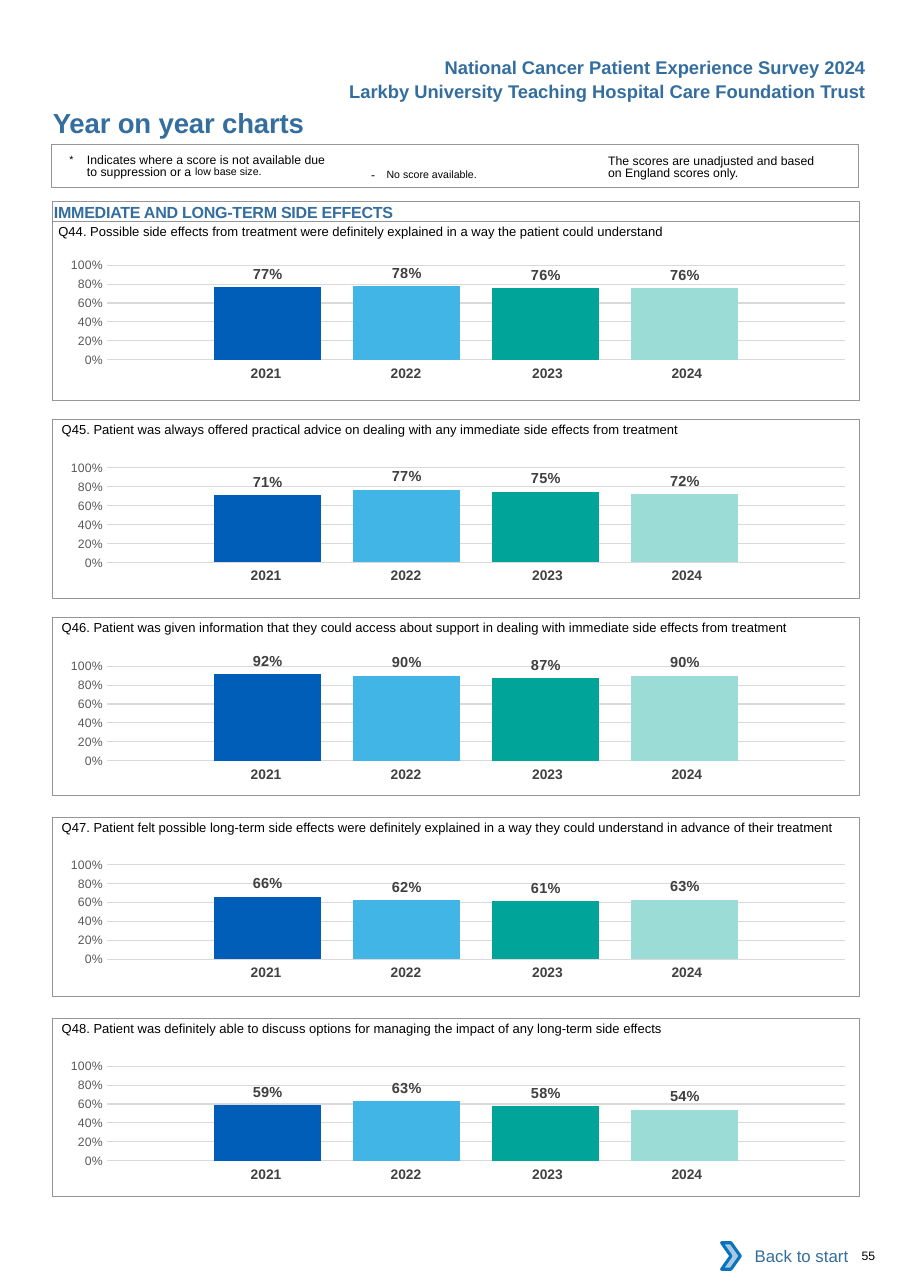
"""Build the year on year charts page of a patient experience survey report."""
from pptx import Presentation
from pptx.chart.data import CategoryChartData
from pptx.dml.color import RGBColor
from pptx.enum.chart import XL_CHART_TYPE as ChartType, XL_LABEL_POSITION as LabelPosition
from pptx.enum.chart import XL_TICK_MARK as TickMark
from pptx.enum.shapes import MSO_SHAPE as Shape
from pptx.enum.text import MSO_ANCHOR as Anchor, PP_ALIGN as Align
from pptx.oxml import parse_xml
from pptx.oxml.ns import nsdecls, qn
from pptx.util import Inches, Pt

BLACK = RGBColor(0x00, 0x00, 0x00)
WHITE = RGBColor(0xFF, 0xFF, 0xFF)
HEADING = RGBColor(0x33, 0x6E, 0x9F)
FRAME = RGBColor(0x93, 0x95, 0x98)
YEAR_TEXT = RGBColor(0x41, 0x40, 0x42)
VALUE_TEXT = RGBColor(0x40, 0x40, 0x40)
AXIS_TEXT = RGBColor(0x59, 0x59, 0x59)
GRID = RGBColor(0xD9, 0xD9, 0xD9)
CHEVRON_FILL = RGBColor(0xA8, 0xC7, 0xE9)
CHEVRON_LINE = RGBColor(0x0A, 0x74, 0xBB)
BARS = (RGBColor(0x00, 0x5E, 0xB8), RGBColor(0x41, 0xB6, 0xE6),
        RGBColor(0x00, 0xA4, 0x99), RGBColor(0x9C, 0xDC, 0xD7))

YEAR_COLUMNS = (("2021", 1.27, 0), ("2022", 1.27, 0), ("2023", 1.34, 0.04), ("2024", 1.27, 0.12))
PLOT_LAYOUT = {"layoutTarget": "inner", "xMode": "edge", "yMode": "edge",
               "x": 0.08, "y": 0.145, "w": 0.915, "h": 0.666}
NO_TABLE_STYLE = "{2D5ABB26-0587-4C30-8999-92F81FD0307C}"
PADDING = (0.1, 0.05, 0.1, 0.05)
NOTE = {"insets": (0, 0.03, 0, 0), "leading": Pt(8.1)}
TITLE = {"color": HEADING, "bold": True}
PANELS = (
    (2.01, 2.22, 0.53, "Q44. Possible side effects from treatment were definitely explained "
     "in a way the patient could understand", (0.77, 0.78, 0.76, 0.76)),
    (3.81, 4.06, 0.56, "Q45. Patient was always offered practical advice on dealing with "
     "any immediate side effects from treatment", (0.71, 0.77, 0.75, 0.72)),
    (5.6, 5.86, 0.56, "Q46. Patient was given information that they could access about "
     "support in dealing with immediate side effects from treatment", (0.92, 0.9, 0.87, 0.9)),
    (7.42, 7.66, 0.56, "Q47. Patient felt possible long-term side effects were definitely "
     "explained in a way they could understand in advance of their treatment",
     (0.66, 0.62, 0.61, 0.63)),
    (9.24, 9.49, 0.56, "Q48. Patient was definitely able to discuss options for managing "
     "the impact of any long-term side effects", (0.59, 0.63, 0.58, 0.54)),
)


def assign(target, **values):
    """Set each named format value on the target."""
    for name, value in values.items():
        setattr(target, name, value)


class SurveyPage:
    """Hold the page style and the current slide."""

    font_name = "Arial"

    def __init__(self, presentation):
        """Add a blank slide to the presentation."""
        self.slide = presentation.slides.add_slide(presentation.slide_layouts[6])

    def style(self, font, size, color, bold=False):
        """Apply the page font with a size, colour and weight."""
        assign(font, name=self.font_name, size=Pt(size), bold=bold)
        font.color.rgb = color

    def fill_frame(self, frame, runs, color=BLACK, bold=False, align=Align.LEFT,
                   insets=(0, 0, 0, 0), anchor=Anchor.TOP, leading=None):
        """Put runs of (text, size, baseline, spacing) in one paragraph."""
        left, top, right, bottom = map(Inches, insets)
        assign(frame, word_wrap=True, vertical_anchor=anchor, margin_left=left,
               margin_top=top, margin_right=right, margin_bottom=bottom)
        paragraph = frame.paragraphs[0]
        assign(paragraph, alignment=align, line_spacing=leading)
        for text, size, baseline, spacing in runs:
            run = paragraph.add_run()
            run.text = text
            self.style(run.font, size, color, bold)
            properties = run._r.get_or_add_rPr()
            properties.set("baseline", str(baseline * 1000))
            properties.set("spc", str(round(spacing * 100)))
        return paragraph

    def text(self, box, *runs, **options):
        """Add a text box."""
        shape = self.slide.shapes.add_textbox(*map(Inches, box))
        return self.fill_frame(shape.text_frame, runs, **options)

    def shape(self, box, kind=Shape.RECTANGLE, fill=None, line=None, width=0.5):
        """Add a preset shape without a shadow."""
        shape = self.slide.shapes.add_shape(kind, *map(Inches, box))
        shape.shadow.inherit = False
        shape.line.width = Pt(width)
        for paint, color in ((shape.fill, fill), (shape.line.fill, line)):
            if color is None:
                paint.background()
            else:
                paint.solid()
                paint.fore_color.rgb = color
        return shape

    def year_table(self, top):
        """Add the row of year labels under a chart."""
        box = map(Inches, (1.73, top, 5.15, 0.27))
        graphic = self.slide.shapes.add_table(1, len(YEAR_COLUMNS), *box)
        assign(graphic.table, first_row=False, horz_banding=False)
        next(graphic._element.iter(qn("a:tableStyleId"))).text = NO_TABLE_STYLE
        for index, (year, width, margin) in enumerate(YEAR_COLUMNS):
            graphic.table.columns[index].width = Inches(width)
            cell = graphic.table.cell(0, index)
            cell.fill.background()
            assign(cell, margin_left=Inches(0.1), margin_right=Inches(margin))
            paragraph = cell.text_frame.paragraphs[0]
            assign(paragraph, text=year, alignment=Align.CENTER)
            self.style(paragraph.runs[0].font, 9, YEAR_TEXT, True)

    def chart(self, top, scores):
        """Add a column chart with one series for each year."""
        data = CategoryChartData(number_format="0%")
        data.categories = ["1"]
        for number, score in enumerate(scores, 1):
            data.add_series(f"Series {number}", [score])
        box = map(Inches, (0.39, top, 7.32, 1.29))
        chart = self.slide.shapes.add_chart(ChartType.COLUMN_CLUSTERED, *box, data).chart
        assign(chart, has_legend=False, has_title=False)
        assign(chart.font, name="Calibri", size=Pt(10))
        chart.font.color.rgb = BLACK
        chart.category_axis.visible = False
        axis = chart.value_axis
        assign(axis, minimum_scale=0, maximum_scale=1, major_unit=0.2,
               major_tick_mark=TickMark.NONE, minor_tick_mark=TickMark.NONE)
        axis.format.line.fill.background()
        assign(axis.tick_labels, number_format="0%", number_format_is_linked=False)
        self.style(axis.tick_labels.font, 8, AXIS_TEXT)
        grid = axis.major_gridlines.format.line
        grid.width = Pt(0.75)
        grid.color.rgb = GRID
        plot = chart.plots[0]
        assign(plot, gap_width=200, overlap=-30, vary_by_categories=False)
        for series, color in zip(plot.series, BARS):
            series.format.fill.solid()
            series.format.fill.fore_color.rgb = color
            labels = series.data_labels
            assign(labels, show_value=True, position=LabelPosition.OUTSIDE_END,
                   number_format="0%", number_format_is_linked=False)
            self.style(labels.font, 9.5, VALUE_TEXT, True)
        area = next(chart._chartSpace.iter(qn("c:plotArea")))
        for layout in area.findall(qn("c:layout")):
            area.remove(layout)
        values = "".join(f'<c:{name} val="{value}"/>' for name, value in PLOT_LAYOUT.items())
        area.insert(0, parse_xml(f"<c:layout {nsdecls('c')}><c:manualLayout>{values}"
                                 "</c:manualLayout></c:layout>"))

    def panel(self, top, chart_top, title_left, question, scores):
        """Add a framed question with its chart and years."""
        self.text((title_left, top - 0.07, 7.25, 0.24), (question, 8.5, 0, 0),
                  insets=(0, 0.09, 0, 0))
        self.year_table(chart_top + 1.05)
        self.chart(chart_top, scores)
        self.shape((0.48, top, 7.32, 1.62), line=FRAME)

    def header(self):
        """Add the names, the page title, the notes and the section bar."""
        for top, name in ((0.46, "National Cancer Patient Experience Survey 2024"),
                          (0.68, "Larkby University Teaching Hospital Care Foundation Trust")):
            self.text((2.96, top, 5, 0.3), (name, 12, 0, 0), align=Align.RIGHT,
                      insets=PADDING, **TITLE)
        self.text((0.48, 0.96, 4.5, 0.3), ("Year on year charts", 18, 0, -0.1), **TITLE)
        self.shape((0.47, 1.31, 7.32, 0.39), line=FRAME, width=0.75)
        note = self.text(
            (0.63, 1.38, 2.4, 0.27), ("*\t", 12, 3, 0),
            ("Indicates where a score is not available due to suppression or a ", 8, 0, 0),
            ("low base size.", 12, 7, 0), **NOTE)
        for name, value in (("marL", Inches(0.16)), ("indent", -Inches(0.16))):
            note._p.get_or_add_pPr().set(name, str(value))
        self.text((3.27, 1.41, 1.83, 0.24), ("- ", 8, 0, 2.6),
                  ("No score available.", 12, 3, 0), insets=PADDING)
        self.text((5.52, 1.38, 2.01, 0.27),
                  ("The scores are unadjusted and based on England scores only.", 8, 0, 0), **NOTE)
        bar = self.shape((0.48, 1.83, 7.32, 0.18), line=FRAME)
        heading = ("IMMEDIATE AND LONG-TERM SIDE EFFECTS", 10.5, 0, -0.15)
        self.fill_frame(bar.text_frame, [heading], insets=(0.01, 0.01, 0, 0), **TITLE)

    def footer(self):
        """Add the return button and the page number."""
        button = self.shape((6.62, 11.19, 1.18, 0.42), fill=WHITE)
        self.fill_frame(button.text_frame, [("Back to start", 11, 0, 0)], color=HEADING,
                        align=Align.RIGHT, insets=PADDING, anchor=Anchor.MIDDLE)
        self.shape((6.55, 11.28, 0.17, 0.24), Shape.CHEVRON, CHEVRON_FILL, CHEVRON_LINE, 2)
        self.text((7.82, 11.33, 0.41, 0.13), ("55", 8, 0, 0))


presentation = Presentation()
assign(presentation, slide_width=Inches(8.26), slide_height=Inches(11.69))
page = SurveyPage(presentation)
page.header()
for panel in PANELS:
    page.panel(*panel)
page.footer()
presentation.save("out.pptx")
